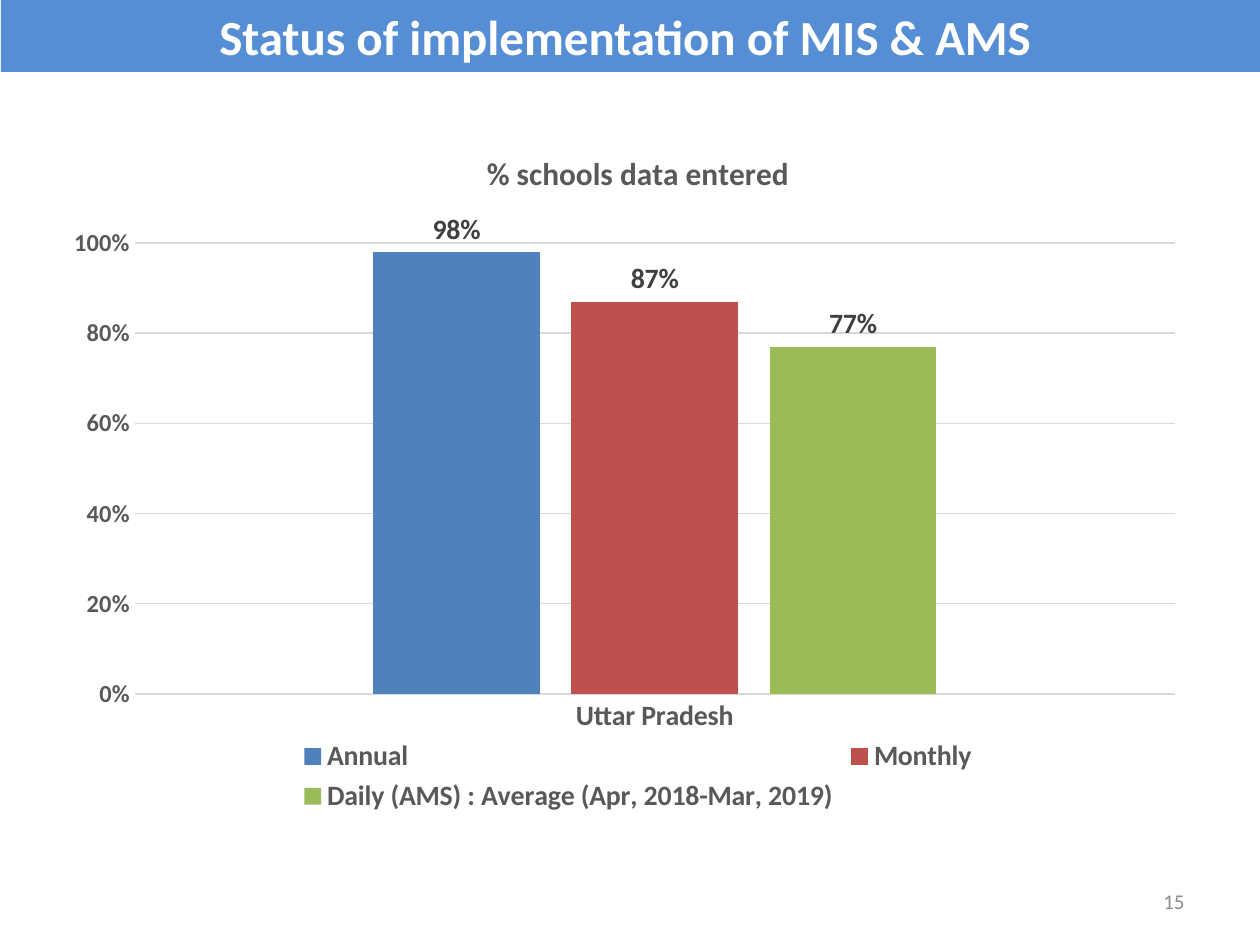
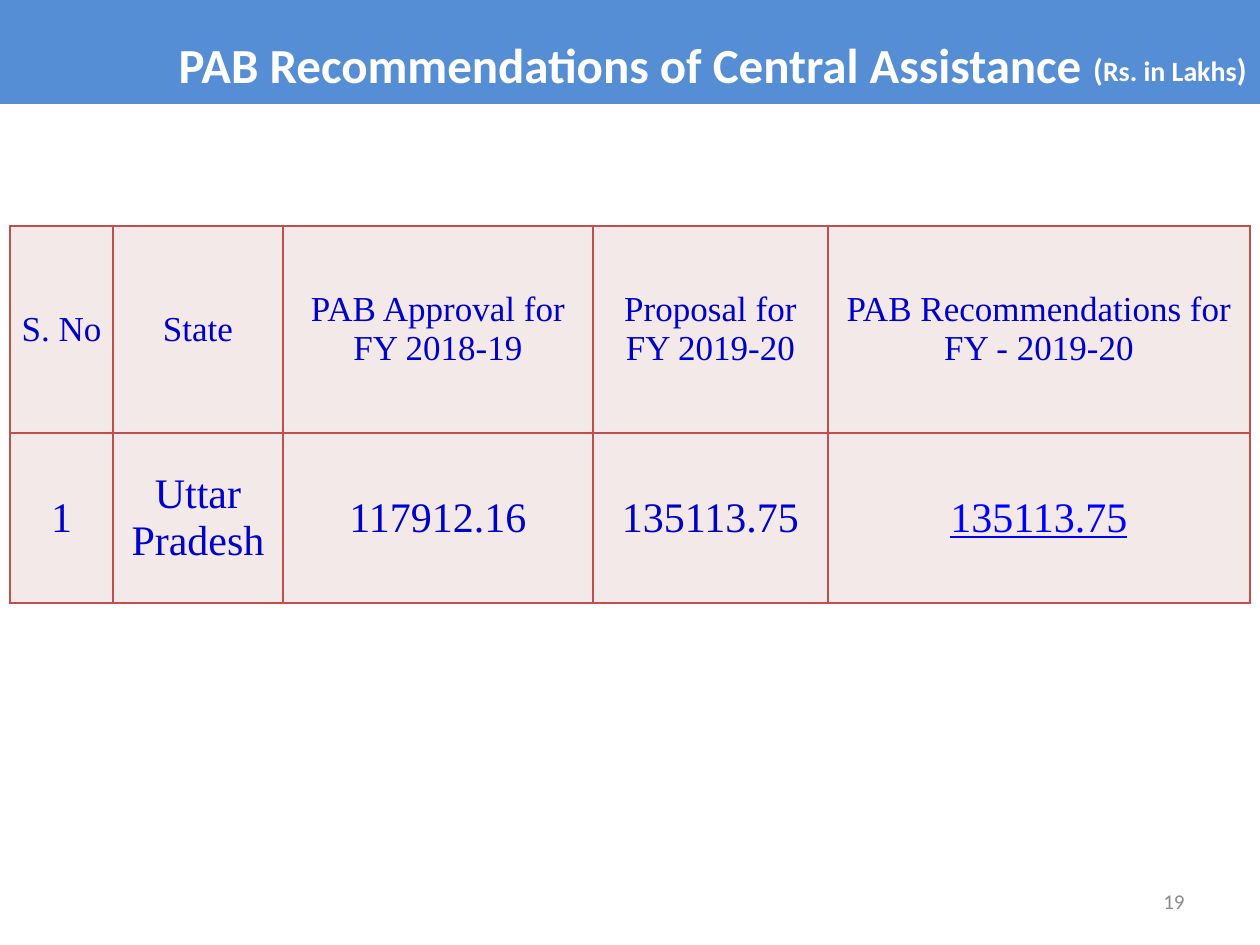
from lxml import etree
from pptx import Presentation
from pptx.chart.data import CategoryChartData
from pptx.dml.color import RGBColor
from pptx.enum.chart import XL_CHART_TYPE, XL_LABEL_POSITION, XL_LEGEND_POSITION, XL_TICK_MARK
from pptx.enum.text import MSO_ANCHOR, MSO_AUTO_SIZE, PP_ALIGN
from pptx.oxml import parse_xml
from pptx.oxml.ns import nsdecls, qn
from pptx.util import Emu, Pt

COLUMNS = XL_CHART_TYPE.COLUMN_CLUSTERED
OUTSIDE = XL_LABEL_POSITION.OUTSIDE_END
BOTTOM = XL_LEGEND_POSITION.BOTTOM
NO_TICK = XL_TICK_MARK.NONE
MIDDLE, TOP = MSO_ANCHOR.MIDDLE, MSO_ANCHOR.TOP
NO_FIT = MSO_AUTO_SIZE.NONE
CENTER, RIGHT = PP_ALIGN.CENTER, PP_ALIGN.RIGHT

PX = 914400 / 126
WHITE, BAND, GRAY = "FFFFFF", "558ED5", "8C8C8C"
CHART_TEXT, LABEL_TEXT, GRID = "595959", "404040", "D9D9D9"
CELL_FILL, CELL_BORDER, CELL_TEXT, LINK_TEXT = "F4E9E9", "C0504D", "0000CC", "0000FF"
SANS, SERIF = "Calibri", "Times New Roman"


def px(length):
    return Emu(round(length * PX))


def box(*lengths):
    return [px(length) for length in lengths]


def rgb(value):
    return RGBColor.from_string(value)


def set_font(font, size, color, name=SANS, bold=False, underline=False):
    font.size = Pt(size)
    font.color.rgb = rgb(color)
    font.name = name
    font.bold = bold
    font.underline = underline


def write(frame, text, align=CENTER, spacing=None, extend=False, **font):
    for index, line in enumerate(text.split("\n")):
        if extend:
            paragraph = frame.paragraphs[-1]
        else:
            paragraph = frame.add_paragraph() if index else frame.paragraphs[0]
        paragraph.alignment = align
        if spacing:
            paragraph.line_spacing = spacing
        run = paragraph.add_run()
        run.text = line
        set_font(run.font, **font)


class Deck:
    def __init__(self):
        self.presentation = Presentation()
        self.presentation.slide_width = px(1260)
        self.presentation.slide_height = px(945)
        self.slide = None

    def new_slide(self, heading, band, number, spacing=None):
        layout = self.presentation.slide_layouts[5]
        self.slide = self.presentation.slides.add_slide(layout)
        title = self.slide.shapes.title
        title.left, title.top, title.width, title.height = box(*band)
        title.fill.solid()
        title.fill.fore_color.rgb = rgb(BAND)
        title.text_frame.auto_size = NO_FIT
        title.text_frame.vertical_anchor = MIDDLE
        write(title.text_frame, heading, spacing=spacing, size=28, color=WHITE, bold=True)
        page = self.text_box((903, 876, 294, 50), MIDDLE)
        write(page, str(number), align=RIGHT, size=12, color=GRAY)

    def text_box(self, place, anchor=TOP, wrap=True):
        frame = self.slide.shapes.add_textbox(*box(*place)).text_frame
        frame.word_wrap = wrap
        frame.vertical_anchor = anchor
        return frame

    def column_chart(self, place, heading, category, shares, plot_area):
        data = CategoryChartData(number_format="0%")
        data.categories = [category]
        for name, share, _ in shares:
            data.add_series(name, [share])
        chart = self.slide.shapes.add_chart(COLUMNS, *box(*place), data).chart
        set_font(chart.font, 10, "000000")
        chart.has_title = True
        write(chart.chart_title.text_frame, heading, size=18, color=CHART_TEXT, bold=True)
        chart.chart_title.include_in_layout = False
        chart.has_legend = True
        chart.legend.position = BOTTOM
        chart.legend.include_in_layout = False
        set_font(chart.legend.font, 16, CHART_TEXT, bold=True)
        self.style_axes(chart)
        self.style_columns(chart.plots[0], shares)
        self.place_plot(chart, plot_area)

    def style_axes(self, chart):
        regions, percent = chart.category_axis, chart.value_axis
        for axis, size in ((regions, 16), (percent, 14)):
            axis.major_tick_mark = axis.minor_tick_mark = NO_TICK
            set_font(axis.tick_labels.font, size, CHART_TEXT, bold=True)
        percent.minimum_scale, percent.maximum_scale = 0, 1
        percent.major_unit = 0.2
        percent.tick_labels.number_format = "0%"
        percent.tick_labels.number_format_is_linked = False
        percent.has_major_gridlines = True
        percent.format.line.fill.background()
        for line in (regions.format.line, percent.major_gridlines.format.line):
            line.color.rgb = rgb(GRID)
            line.width = Pt(0.75)

    def style_columns(self, plot, shares):
        plot.gap_width, plot.overlap = 286, -19
        plot.vary_by_categories = False
        for series, (_, _, color) in zip(plot.series, shares):
            series.format.fill.solid()
            series.format.fill.fore_color.rgb = rgb(color)
            series.invert_if_negative = False
            labels = series.data_labels
            labels.show_value = True
            labels.position = OUTSIDE
            labels.number_format = "0%"
            labels.number_format_is_linked = False
            set_font(labels.font, 16, LABEL_TEXT, bold=True)

    def place_plot(self, chart, plot_area):
        area = chart.plots[0]._element.getparent()
        for layout in area.findall(qn("c:layout")):
            area.remove(layout)
        layout = parse_xml(f"<c:layout {nsdecls('c')}><c:manualLayout/></c:layout>")
        settings = [("layoutTarget", "inner"), ("xMode", "edge"), ("yMode", "edge")]
        settings += zip("xywh", plot_area)
        for tag, value in settings:
            etree.SubElement(layout[0], qn(f"c:{tag}")).set("val", str(value))
        area.insert(0, layout)

    def table(self, left, top, widths, heights, rows, sizes):
        place = box(left, top, sum(widths), sum(heights))
        grid = self.slide.shapes.add_table(len(rows), len(widths), *place).table
        grid.first_row = grid.horz_banding = False
        for column, width in zip(grid.columns, widths):
            column.width = px(width)
        for row, height, texts, size in zip(grid.rows, heights, rows, sizes):
            row.height = px(height)
            for cell, text in zip(row.cells, texts):
                self.fill_cell(cell)
                write(cell.text_frame, text, size=size, color=CELL_TEXT, name=SERIF)
        return grid

    def fill_cell(self, cell):
        cell.vertical_anchor = MIDDLE
        cell.margin_left = cell.margin_right = px(9)
        cell.margin_top = cell.margin_bottom = 0
        for side in "LRTB":
            cell._tc.get_or_add_tcPr().append(parse_xml(
                f'<a:ln{side} {nsdecls("a")} w="12700"><a:solidFill>'
                f'<a:srgbClr val="{CELL_BORDER}"/></a:solidFill></a:ln{side}>'))
        cell.fill.solid()
        cell.fill.fore_color.rgb = rgb(CELL_FILL)


def implementation_status(deck):
    deck.new_slide("Status of implementation of MIS & AMS ", (1, 0, 1259, 72), 15)
    shares = [
        ("Annual", 0.98, "4F81BD"),
        ("Monthly", 0.87, "C0504D"),
        ("Daily (AMS) : Average (Apr, 2018-Mar, 2019)", 0.77, "9BBB59"),
    ]
    deck.column_chart((74, 125, 1123, 694), "% schools data entered",
                      "Uttar Pradesh", shares, (0.05, 0.17, 0.93, 0.65))


def recommendations(deck):
    deck.new_slide("PAB Recommendations of Central Assistance", (0, 0, 1260, 104), 19,
                   spacing=1.4)
    unit = deck.text_box((1080, 44, 180, 50), wrap=False)
    for text, size in (("(", 18), ("Rs. in Lakhs", 16), (")", 18)):
        write(unit, text, extend=True, size=size, color=WHITE, bold=True)
    rows = [
        ["S. No", "State", "PAB Approval for FY 2018-19", "Proposal for\nFY 2019-20",
         "PAB Recommendations for\nFY - 2019-20"],
        ["1", "Uttar Pradesh", "117912.16", "135113.75", "135113.75"],
    ]
    assistance = deck.table(10, 226, [103, 170, 310, 235, 422], [207, 170], rows, [20, 24])
    recommended = assistance.cell(1, 4).text_frame.paragraphs[0].runs[0]
    set_font(recommended.font, 24, LINK_TEXT, SERIF, underline=True)


def main():
    deck = Deck()
    implementation_status(deck)
    recommendations(deck)
    deck.presentation.save("out.pptx")


if __name__ == "__main__":
    main()
